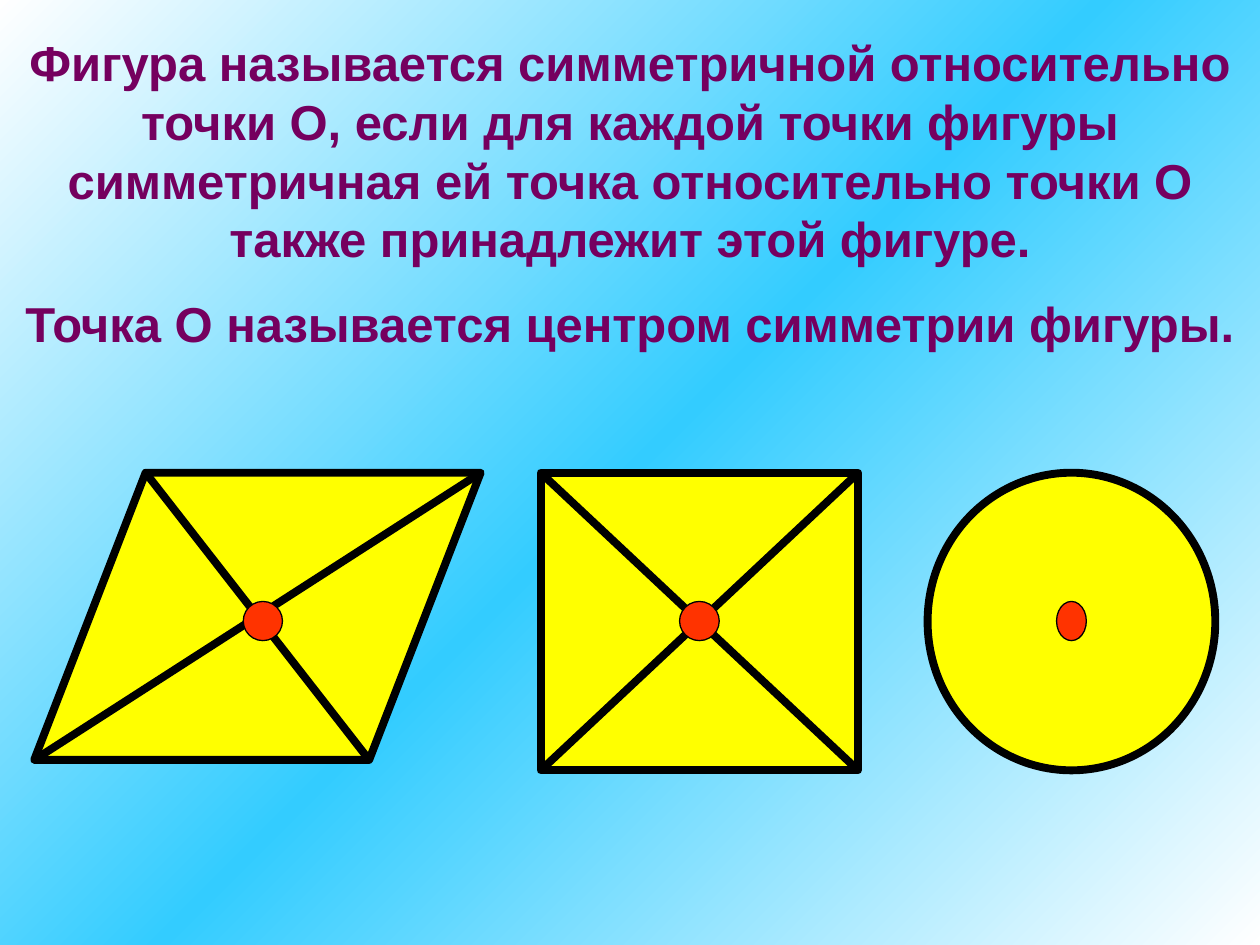
from copy import deepcopy

from lxml.etree import SubElement
from pptx import Presentation
from pptx.dml.color import RGBColor
from pptx.enum.shapes import MSO_CONNECTOR as Connector, MSO_SHAPE as Preset
from pptx.enum.text import MSO_ANCHOR as Anchor, PP_ALIGN as Align
from pptx.oxml.ns import qn
from pptx.util import Cm, Pt

DEFINITION = [
    "Фигура называется симметричной относительно точки О, если для каждой "
    "точки фигуры симметричная ей точка относительно точки О также "
    "принадлежит этой фигуре.",
    "Точка О называется центром симметрии фигуры.",
]
TOP = 9.53
CENTER_Y = 12.52
DOT_HEIGHT = 0.79
SLANT = 0.388


def color(hex_string):
    return RGBColor.from_string(hex_string)


class FigureSlide:
    text_font = {"name": "Arial", "size": Pt(28), "bold": True}
    text_color = "75005F"
    figure_fill = "FFFF00"
    dot_fill = "FF3300"
    line_color = "000000"
    thick, thin = 4.5, 0.75

    def __init__(self, slide):
        self.slide = slide

    def background(self, hex_colors):
        """Fill with evenly spaced stops, from top left to bottom right."""
        fill = self.slide.background.fill
        fill.gradient()
        fill.gradient_angle = 315
        stop_list = self.slide.element.find(".//" + qn("a:gsLst"))
        stop_list.insert(1, deepcopy(stop_list[0]))
        last = len(hex_colors) - 1
        for index, (stop, value) in enumerate(zip(fill.gradient_stops, hex_colors)):
            stop.position = index / last
            stop.color.rgb = color(value)

    def text(self, paragraphs, left, top, width, height):
        box = self.slide.shapes.add_textbox(Cm(left), Cm(top), Cm(width), Cm(height))
        frame = box.text_frame
        frame.word_wrap = True
        frame.vertical_anchor = Anchor.TOP
        for index, content in enumerate(paragraphs):
            paragraph = frame.add_paragraph() if index else frame.paragraphs[0]
            paragraph.alignment = Align.CENTER
            if index:
                paragraph.space_before = Pt(14.5)
            run = paragraph.add_run()
            run.text = content
            for name, value in self.text_font.items():
                setattr(run.font, name, value)
            run.font.color.rgb = color(self.text_color)

    def outline(self, line, width):
        line.color.rgb = color(self.line_color)
        line.width = Pt(width)

    def shape(self, preset, left, top, width, height, fill, line_width):
        shape = self.slide.shapes.add_shape(
            preset, Cm(left), Cm(top), Cm(width), Cm(height))
        shape.shadow.inherit = False
        shape.fill.solid()
        shape.fill.fore_color.rgb = color(fill)
        self.outline(shape.line, line_width)
        return shape

    def figure(self, preset, left, width, height):
        return self.shape(preset, left, TOP, width, height,
                          self.figure_fill, self.thick)

    def diagonals(self, left, width, height, offset=0):
        """Join opposite corners; offset is how far the top side leans right."""
        right, bottom = left + width, TOP + height
        for top_x, bottom_x in ((left + offset, right - offset), (right, left)):
            line = self.slide.shapes.add_connector(
                Connector.STRAIGHT, Cm(top_x), Cm(TOP), Cm(bottom_x), Cm(bottom))
            self.outline(line.line, self.thick)
            SubElement(line.element.spPr, qn("a:effectLst"))

    def dot(self, center_x, width):
        self.shape(Preset.OVAL, center_x - width / 2, CENTER_Y - DOT_HEIGHT / 2,
                   width, DOT_HEIGHT, self.dot_fill, self.thin)


def main():
    presentation = Presentation()
    presentation.slide_width, presentation.slide_height = Cm(25.4), Cm(19.05)
    blank_layout = presentation.slide_layouts[6]
    page = FigureSlide(presentation.slides.add_slide(blank_layout))

    page.background(["FFFFFF", "33CCFF", "FFFFFF"])
    page.text(DEFINITION, 0, 0.53, 25.4, 6.78)

    parallelogram = (0.69, 9, 5.79)
    rectangle = (10.9, 6.4, 6)
    circle = (18.7, 5.8, 6)
    page.figure(Preset.PARALLELOGRAM, *parallelogram).adjustments[0] = SLANT
    page.figure(Preset.RECTANGLE, *rectangle)
    page.figure(Preset.OVAL, *circle)
    page.diagonals(*parallelogram, offset=SLANT * parallelogram[2])
    page.diagonals(*rectangle)
    for center_x, width in ((5.3, 0.79), (14.1, 0.8), (21.6, 0.6)):
        page.dot(center_x, width)

    presentation.save("out.pptx")


if __name__ == "__main__":
    main()
